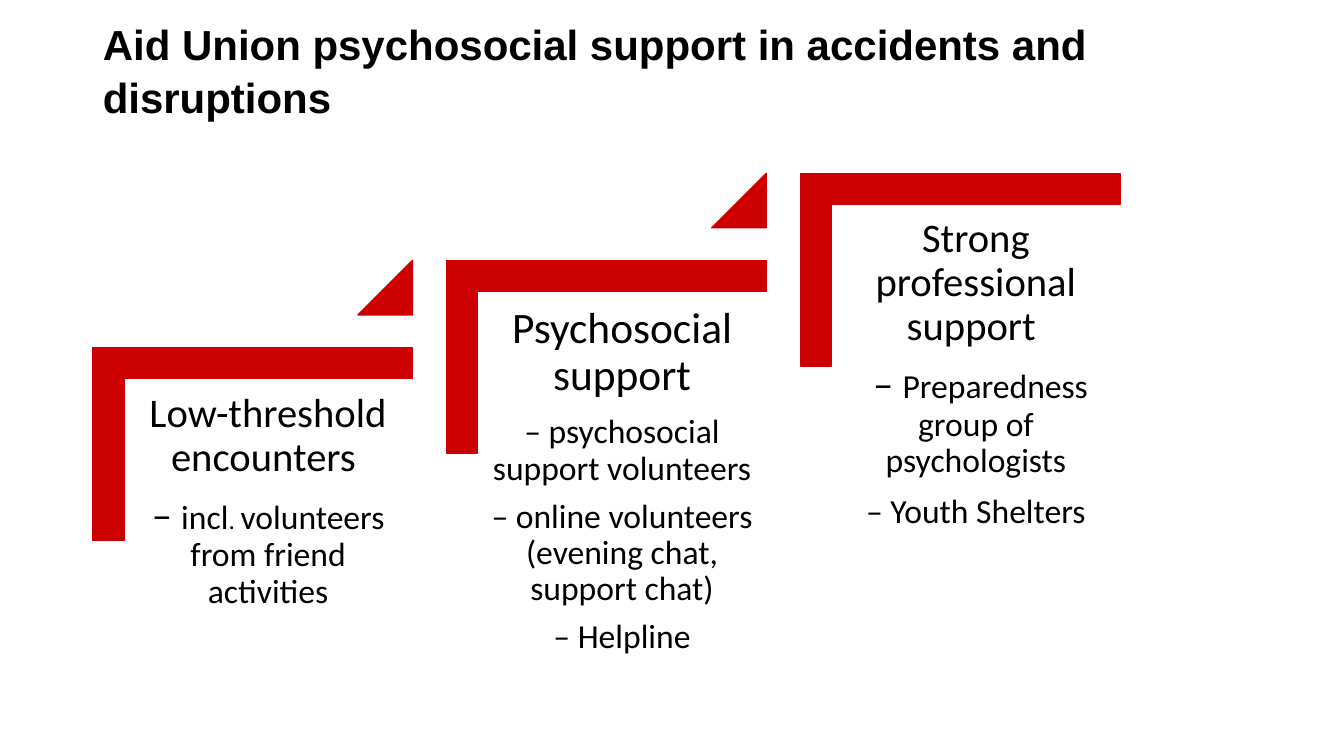
from pptx import Presentation
from pptx.dml.color import RGBColor
from pptx.enum.shapes import MSO_SHAPE
from pptx.enum.text import MSO_ANCHOR, MSO_AUTO_SIZE, PP_ALIGN
from pptx.util import Inches, Pt

# Content: each step has an inset and paragraphs made of (text, size) runs
TITLE = "Aid Union psychosocial support in accidents and disruptions"
STEPS = [
    (0.12, [
        [("Low-threshold encounters ", 29)],
        [("– ", 29), ("incl", 24), (". ", 18),
         ("volunteers from friend activities", 24)],
    ]),
    (0.13, [
        [("Psychosocial support", 31)],
        [("– psychosocial support volunteers", 24)],
        [("– online volunteers (evening chat, support chat)", 24)],
        [("– Helpline", 24)],
    ]),
    (0.12, [
        [("Strong professional support ", 29)],
        [(" – ", 29), ("Preparedness group of psychologists", 24)],
        [("– Youth Shelters", 24)],
    ]),
]
RED, BLACK = "CC0000", "000000"

# Staircase grid, in inches
LEFT, TOP = 0.92, 3.45           # first bracket as seen
STEP_X, RISE = 3.51, 0.865       # offset from one step to the next
BRACKET_W, BRACKET_H = 3.17, 1.91
TEXT_DX, TEXT_DY, TEXT_W, TEXT_H = 0.31, 0.32, 2.86, 2.51
ARROW = 0.54
BAR = 0.161                      # bar thickness as a share of the bracket
SPACE_AFTER = 0.35               # share of the paragraph's largest size


def rgb(color):
    return RGBColor.from_string(color)


def add_red(s, kind, x, y, w, h, adjustments):
    sp = s.shapes.add_shape(kind, Inches(x), Inches(y), Inches(w), Inches(h))
    sp.shadow.inherit = False
    sp.fill.solid()
    sp.fill.fore_color.rgb = rgb(RED)
    sp.line.color.rgb = rgb(RED)
    sp.line.width = Pt(1)
    for i, value in enumerate(adjustments):
        sp.adjustments[i] = value
    return sp


def add_run(p, text, size, font, bold=False):
    r = p.add_run()
    r.text = text
    r.font.name = font
    r.font.size = Pt(size)
    r.font.bold = bold
    r.font.color.rgb = rgb(BLACK)


def add_step_text(s, x, y, inset, paragraphs):
    tf = s.shapes.add_textbox(Inches(x), Inches(y),
                              Inches(TEXT_W), Inches(TEXT_H)).text_frame
    tf.word_wrap = True
    tf.margin_left = tf.margin_right = Inches(inset)
    tf.margin_top = tf.margin_bottom = Inches(inset)
    for i, runs in enumerate(paragraphs):
        p = tf.add_paragraph() if i else tf.paragraphs[0]
        p.alignment = PP_ALIGN.CENTER
        p.line_spacing = 0.9
        p.space_after = Pt(round(SPACE_AFTER * max(size for _, size in runs), 1))
        for text, size in runs:
            add_run(p, text, size, "Calibri")


def main():
    prs = Presentation()
    prs.slide_width, prs.slide_height = Inches(13.33), Inches(7.5)
    s = prs.slides.add_slide(prs.slide_layouts[5])

    # Title
    title = s.shapes.title
    title.left, title.top = Inches(LEFT), Inches(0.26)
    title.width, title.height = Inches(11.5), Inches(0.85)
    tf = title.text_frame
    tf.word_wrap = True
    tf.auto_size = MSO_AUTO_SIZE.NONE
    tf.vertical_anchor = MSO_ANCHOR.MIDDLE
    p = tf.paragraphs[0]
    p.alignment = PP_ALIGN.LEFT
    p.line_spacing = 1.05
    add_run(p, TITLE, 30, "Arial", bold=True)

    # Steps: bracket, text and a triangle leading up to the next step
    turn = (BRACKET_W - BRACKET_H) / 2
    for i, (inset, paragraphs) in enumerate(STEPS):
        x, y = LEFT + i * STEP_X, TOP - i * RISE
        bracket = add_red(s, MSO_SHAPE.CORNER, x + turn, y - turn,
                          BRACKET_H, BRACKET_W, [BAR, BAR])
        bracket.rotation = 90
        add_step_text(s, x + TEXT_DX, y + TEXT_DY, inset, paragraphs)
        if i < len(STEPS) - 1:
            add_red(s, MSO_SHAPE.ISOSCELES_TRIANGLE, x + BRACKET_W - ARROW,
                    y - RISE, ARROW, ARROW, [1])

    prs.save("out.pptx")


if __name__ == "__main__":
    main()
